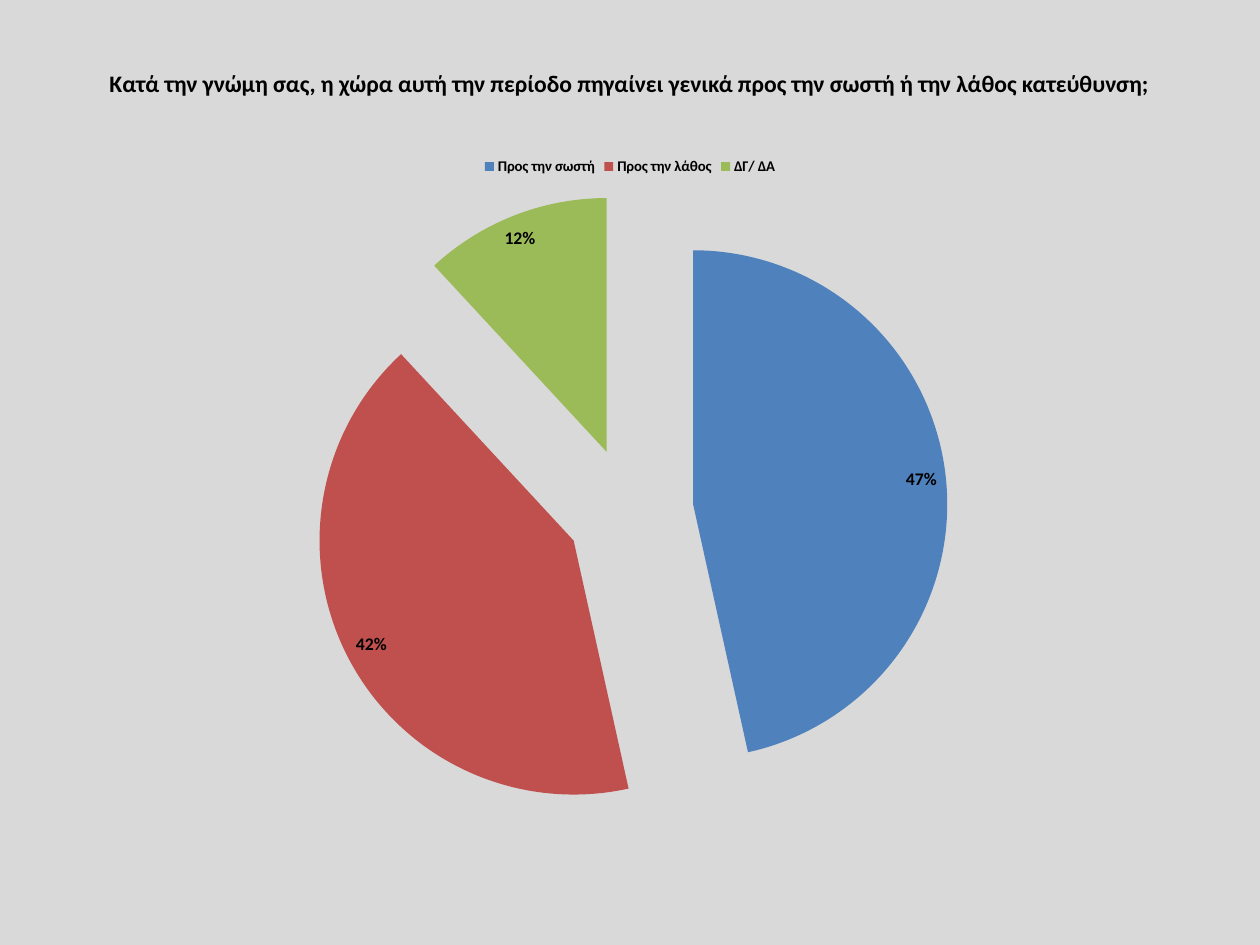
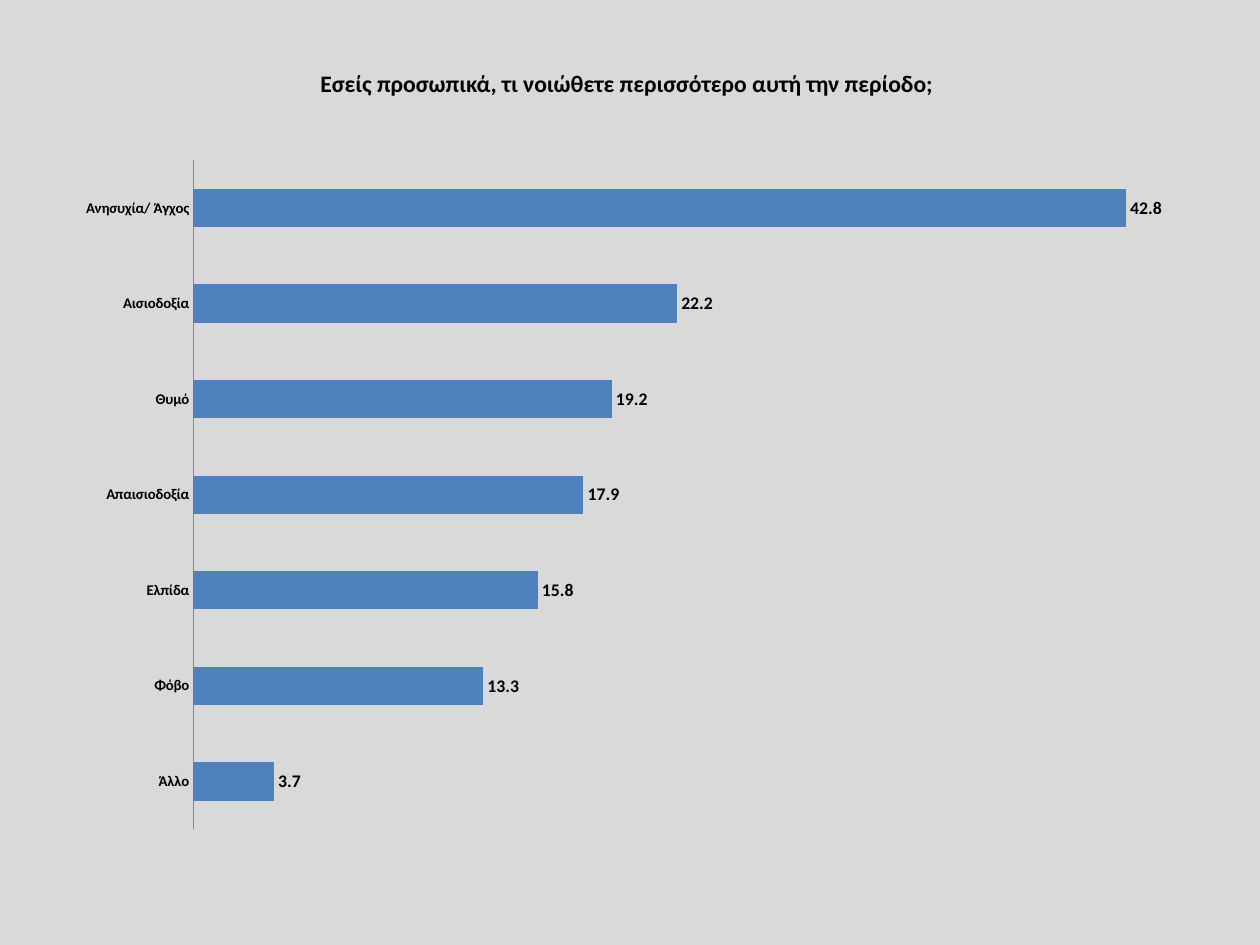
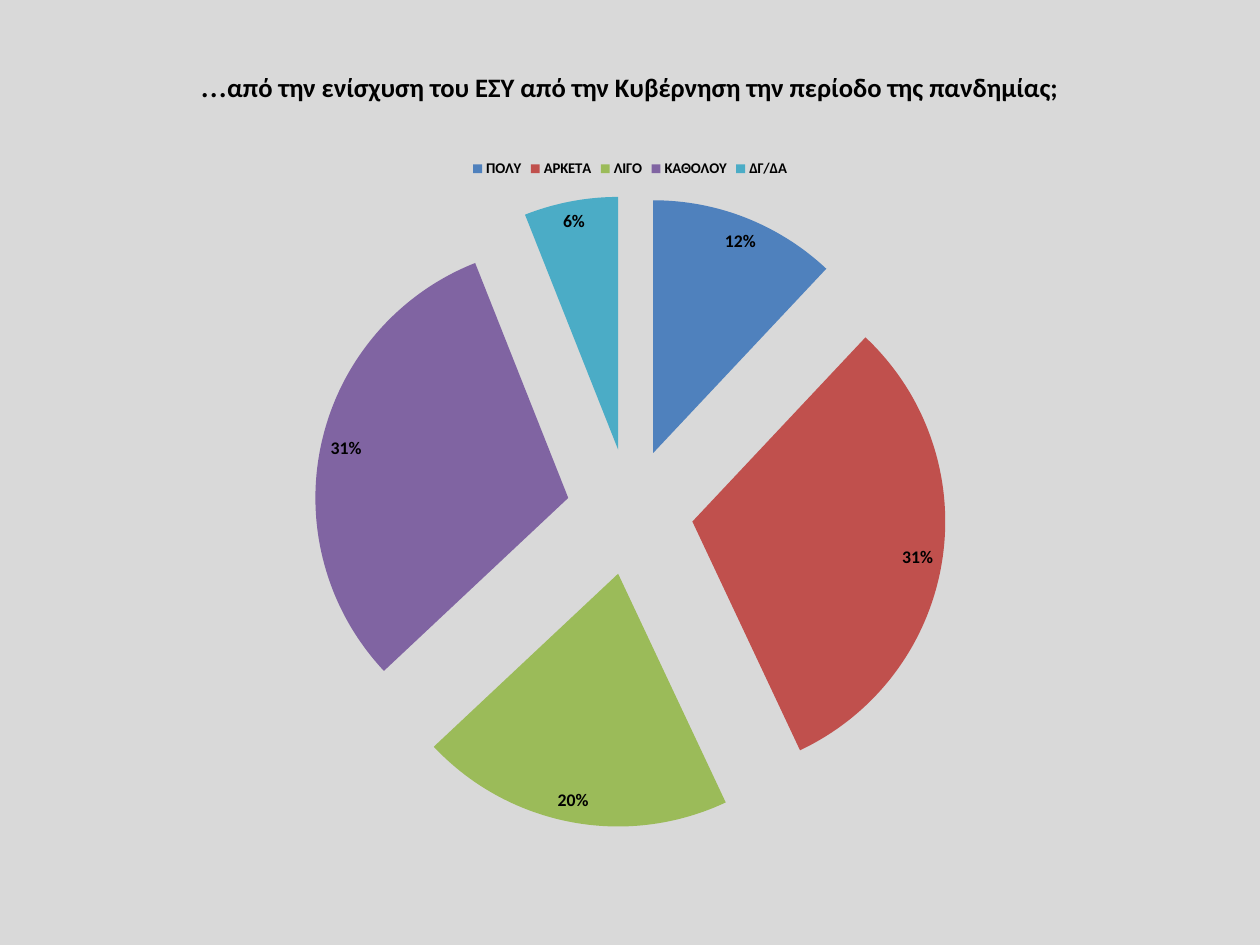
from lxml import etree
from pptx import Presentation, util as u
from pptx.chart import data as cd
from pptx.dml import color as col
from pptx.enum import chart as ch, text as tx
from pptx.oxml import ns

INK = {
    "back": "D9D9D9", "text": "000000", "axis": "878787",
    "blue": "4F81BD", "red": "C0504D", "green": "9BBB59",
    "plum": "8064A2", "teal": "4BACC6",
}
SLICES = ["blue", "red", "green", "plum", "teal"]


def ink(name):
    return col.RGBColor.from_string(INK[name])


def style(font, size=10, bold=True, face="Calibri"):
    font.name, font.size, font.bold = face, u.Pt(size), bold
    font.color.rgb = ink("text")


def write(par, text, **form):
    part = par.add_run()
    part.text = text
    style(part.font, **form)


class Deck:
    """Shared style and the current slide."""

    def __init__(self):
        self.prs = Presentation()
        self.prs.slide_width = u.Inches(11.84)
        self.prs.slide_height = u.Inches(8.88)
        fill = self.prs.slide_master.background.fill
        fill.solid()
        fill.fore_color.rgb = ink("back")

    def page(self, *parts):
        """Add a slide; each title part is a (text, format) pair."""
        self.slide = self.prs.slides.add_slide(self.prs.slide_layouts[5])
        title = self.slide.shapes.title
        title.left, title.top = u.Inches(0.81), u.Inches(0.47)
        title.width, title.height = u.Inches(10.21), u.Inches(0.62)
        frame = title.text_frame
        frame.word_wrap, frame.auto_size = True, tx.MSO_AUTO_SIZE.NONE
        frame.vertical_anchor = tx.MSO_ANCHOR.MIDDLE
        frame.margin_left = frame.margin_right = u.Inches(0.12)
        frame.margin_top = frame.margin_bottom = u.Inches(0.06)
        par = frame.paragraphs[0]
        par.alignment = tx.PP_ALIGN.CENTER
        for text, form in parts:
            write(par, text, **form)

    def chart(self, kind, rows, top, tall, form):
        """Add a chart with one series and bold labels."""
        data = cd.CategoryChartData()
        data.categories = list(rows)
        data.add_series("Series 1", list(rows.values()))
        chart = self.slide.shapes.add_chart(
            kind, u.Inches(0.59), u.Inches(top),
            u.Inches(10.66), u.Inches(tall), data).chart
        chart.has_title = False
        style(chart.font, bold=False, face="Arial")

        # Clear area with a thin border
        area = etree.fromstring(
            f'<c:spPr {ns.nsdecls("c", "a")}><a:noFill/><a:ln w="9525"><a:solidFill>'
            f'<a:srgbClr val="{INK["back"]}"/></a:solidFill></a:ln></c:spPr>')
        chart.element.find(ns.qn("c:chart")).addnext(area)

        plot = chart.plots[0]
        plot.has_data_labels = True
        tags = plot.data_labels
        tags.number_format, tags.number_format_is_linked = form, False
        style(tags.font, size=12)
        return chart, plot, tags

    def pie(self, rows, top=1.37, tall=6.56):
        chart, plot, tags = self.chart(ch.XL_CHART_TYPE.PIE, rows, top, tall, "0%")
        plot.vary_by_categories = True
        tags.show_percentage, tags.show_value = True, False
        tags.position = ch.XL_LABEL_POSITION.BEST_FIT

        # Legend
        chart.has_legend = True
        chart.legend.position = ch.XL_LEGEND_POSITION.TOP
        chart.legend.include_in_layout = False
        style(chart.legend.font)

        # Slices, pulled apart
        ser = plot.series[0]
        for i, name in zip(range(len(rows)), SLICES):
            fill = ser.points[i].format.fill
            fill.solid()
            fill.fore_color.rgb = ink(name)
        pull = etree.fromstring(f'<c:explosion {ns.nsdecls("c")} val="25"/>')
        ser._element.find(ns.qn("c:dPt")).addprevious(pull)

    def bars(self, rows, top=1.37, tall=6.56):
        chart, plot, tags = self.chart(
            ch.XL_CHART_TYPE.BAR_CLUSTERED, rows, top, tall, "0.0")
        chart.has_legend = False
        plot.vary_by_categories, plot.gap_width = False, 150
        tags.show_value = True
        tags.position = ch.XL_LABEL_POSITION.OUTSIDE_END
        fill = plot.series[0].format.fill
        fill.solid()
        fill.fore_color.rgb = ink("blue")

        # Axes
        vals, cats = chart.value_axis, chart.category_axis
        vals.visible = vals.has_major_gridlines = False
        vals.minimum_scale, vals.maximum_scale = 0, 45
        cats.major_tick_mark = cats.minor_tick_mark = ch.XL_TICK_MARK.NONE
        cats.format.line.color.rgb = ink("axis")
        cats.format.line.width = u.Pt(0.75)
        style(cats.tick_labels.font)


def main():
    deck = Deck()

    # Direction of the country
    deck.page(("Κατά την γνώμη σας, η χώρα αυτή την περίοδο πηγαίνει γενικά "
               "προς την σωστή ή την λάθος κατεύθυνση;", {"size": 16}))
    deck.pie({"Προς την σωστή": 47, "Προς την λάθος": 42, "ΔΓ/ ΔΑ": 12})

    # Feelings
    deck.page(("Εσείς προσωπικά, τι νοιώθετε περισσότερο αυτή την περίοδο; ",
               {"size": 16}))
    deck.bars({"Άλλο": 3.7, "Φόβο": 13.3, "Ελπίδα": 15.8, "Απαισιοδοξία": 17.9,
               "Θυμό": 19.2, "Αισιοδοξία": 22.2, "Ανησυχία/ Άγχος": 42.8})

    # Health system
    deck.page(("...", {"size": 24, "bold": False}),
              ("από την ενίσχυση του ΕΣΥ από την Κυβέρνηση την περίοδο "
               "της πανδημίας;", {"size": 18}))
    deck.pie({"ΠΟΛΥ": 12, "ΑΡΚΕΤΑ": 31, "ΛΙΓΟ": 20, "ΚΑΘΟΛΟΥ": 31, "ΔΓ/ΔΑ": 6},
             top=1.39, tall=6.53)

    deck.prs.save("out.pptx")


if __name__ == "__main__":
    main()
